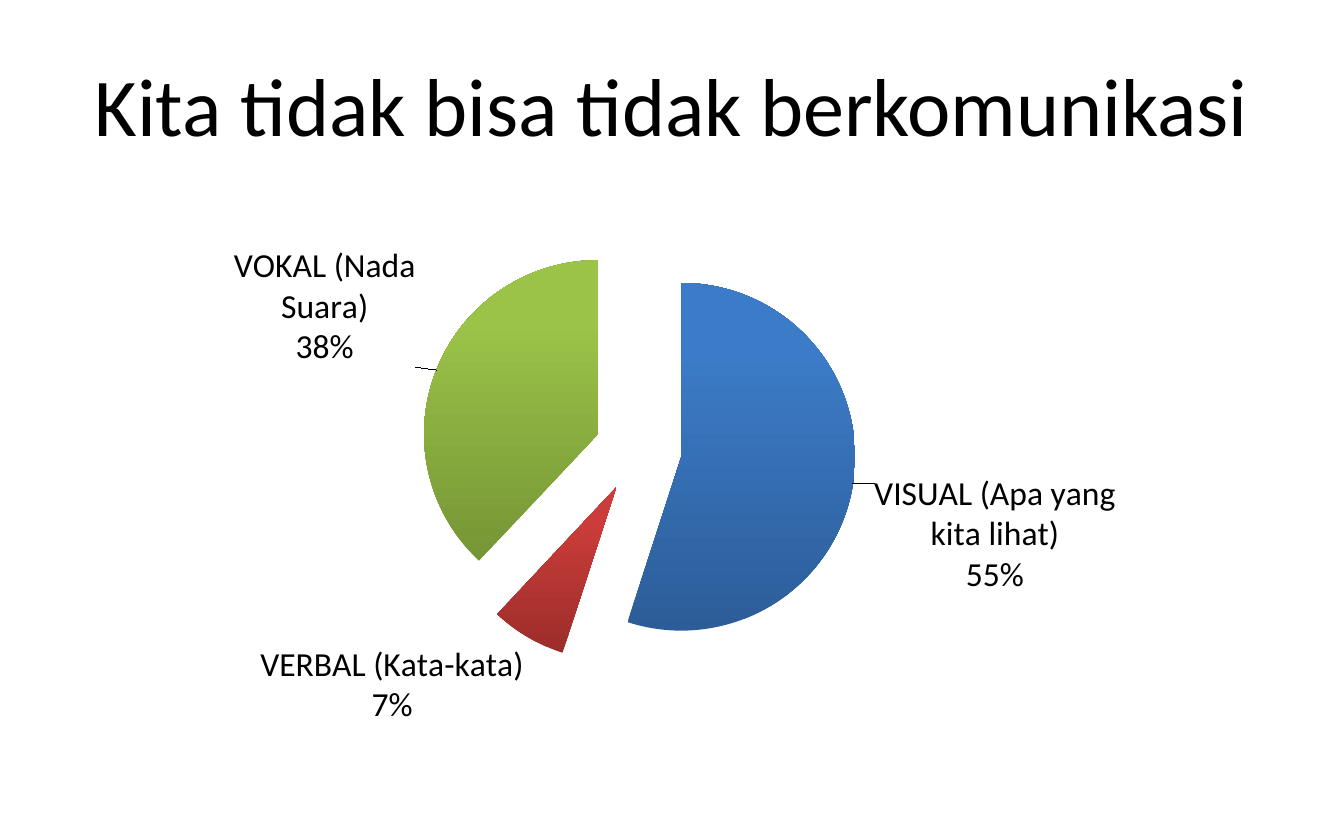
from lxml import etree
from pptx import Presentation
from pptx.chart.data import CategoryChartData
from pptx.dml.color import RGBColor
from pptx.enum.chart import XL_CHART_TYPE, XL_LABEL_POSITION
from pptx.enum.text import MSO_ANCHOR, PP_ALIGN
from pptx.oxml import parse_xml
from pptx.oxml.ns import nsdecls, qn
from pptx.util import Pt

PX = 9144  # 100 px to the inch
BLACK = RGBColor(0x00, 0x00, 0x00)
BLUE = (RGBColor(0x2C, 0x5D, 0x98), RGBColor(0x3C, 0x7B, 0xC7))
RED = (RGBColor(0x9B, 0x2D, 0x2A), RGBColor(0xCB, 0x3D, 0x3A))
GREEN = (RGBColor(0x76, 0x95, 0x35), RGBColor(0x9B, 0xC3, 0x48))


def set_text(tf, text, size=18, color=BLACK, font="Calibri", align=PP_ALIGN.CENTER):
    p = tf.paragraphs[0]
    p.alignment = align
    r = p.add_run()
    r.text = text
    r.font.size, r.font.name = Pt(size), font
    r.font.color.rgb = color


def manual_layout(**values):
    items = "".join(f'<c:{tag} val="{val}"/>' for tag, val in values.items())
    return parse_xml(f'<c:layout {nsdecls("c")}><c:manualLayout>{items}'
                     '</c:manualLayout></c:layout>')


prs = Presentation()
prs.slide_width, prs.slide_height = 1000 * PX, 625 * PX
s = prs.slides.add_slide(prs.slide_layouts[5])

# Title
title = s.shapes.title
title.left, title.top, title.width, title.height = 50 * PX, 25 * PX, 900 * PX, 104 * PX
title.text_frame.vertical_anchor = MSO_ANCHOR.MIDDLE
set_text(title.text_frame, "Kita tidak bisa tidak berkomunikasi", size=44)

# Pie chart
data = CategoryChartData(number_format="0")
data.categories = ["VISUAL (Apa yang kita lihat)", "VERBAL (Kata-kata)", "VOKAL (Nada Suara)"]
data.add_series("Series 1", (55, 7, 38))
chart = s.shapes.add_chart(XL_CHART_TYPE.PIE, 0, 127 * PX, 1000 * PX, 462 * PX, data).chart
chart.has_legend = False
chart.has_title = False
chart.font.size, chart.font.name = Pt(18), "Calibri"
chart.font.color.rgb = BLACK
plot = chart.plots[0]
plot.vary_by_categories = True
area = chart._chartSpace.find(".//" + qn("c:plotArea"))
for old in area.findall(qn("c:layout")):
    area.remove(old)
area.insert(0, manual_layout(layoutTarget="inner", xMode="edge", yMode="edge",
                             x=0.31, y=0.1, w=0.33, h=0.7))

# Exploded slices with vertical gradients
series = plot.series[0]
explosion = etree.Element(qn("c:explosion"), val="25")
series._element.find(qn("c:tx")).addnext(explosion)
for i, colors in enumerate((BLUE, RED, GREEN)):
    fill = series.points[i].format.fill
    fill.gradient()
    fill.gradient_angle = 90
    for stop, color, position in zip(fill.gradient_stops, colors, (0, 0.8)):
        stop.color.rgb, stop.position = color, position

# Category and percentage labels, two of them shifted off the slices
labels = series.data_labels
labels.show_value = False
labels.show_category_name = labels.show_percentage = True
labels.show_legend_key = False
labels.number_format, labels.number_format_is_linked = "0%", False
labels.position = XL_LABEL_POSITION.BEST_FIT
labels._element.find(qn("c:showLeaderLines")).set("val", "1")
for i, (x, y) in {0: (0.01, -0.02), 2: (-0.01, 0)}.items():
    label = series.points[i].data_label
    label.font.size = Pt(18)
    label.position = XL_LABEL_POSITION.OUTSIDE_END
    item = labels._element.find(qn("c:dLbl") + f"[{i // 2 + 1}]")
    item.find(qn("c:idx")).addnext(manual_layout(x=x, y=y))
    for tag, val in (("showVal", "0"), ("showCatName", "1"), ("showPercent", "1")):
        item.find(qn("c:" + tag)).set("val", val)
for item in [labels._element, *labels._element.findall(qn("c:dLbl"))]:
    separator = etree.Element(qn("c:separator"))
    separator.text = "\n"
    item.find(qn("c:showBubbleSize")).addnext(separator)

prs.save("out.pptx")
